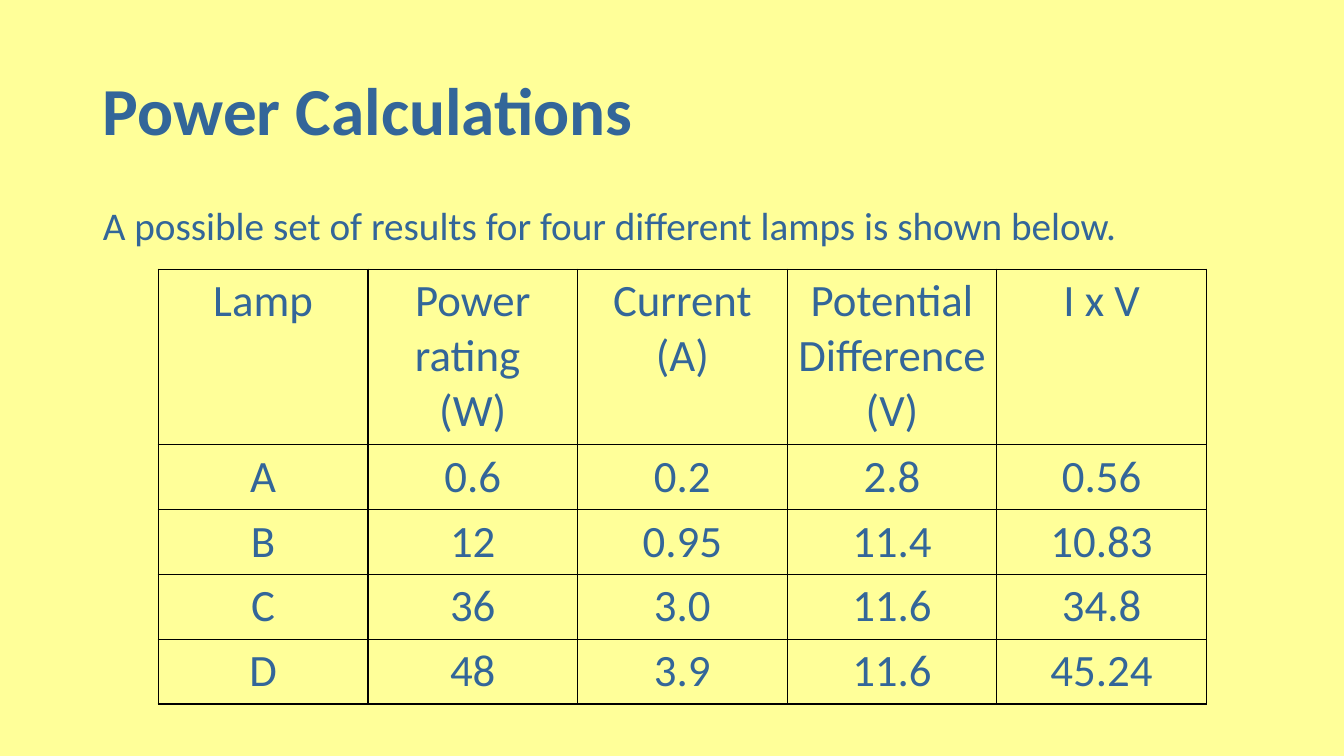
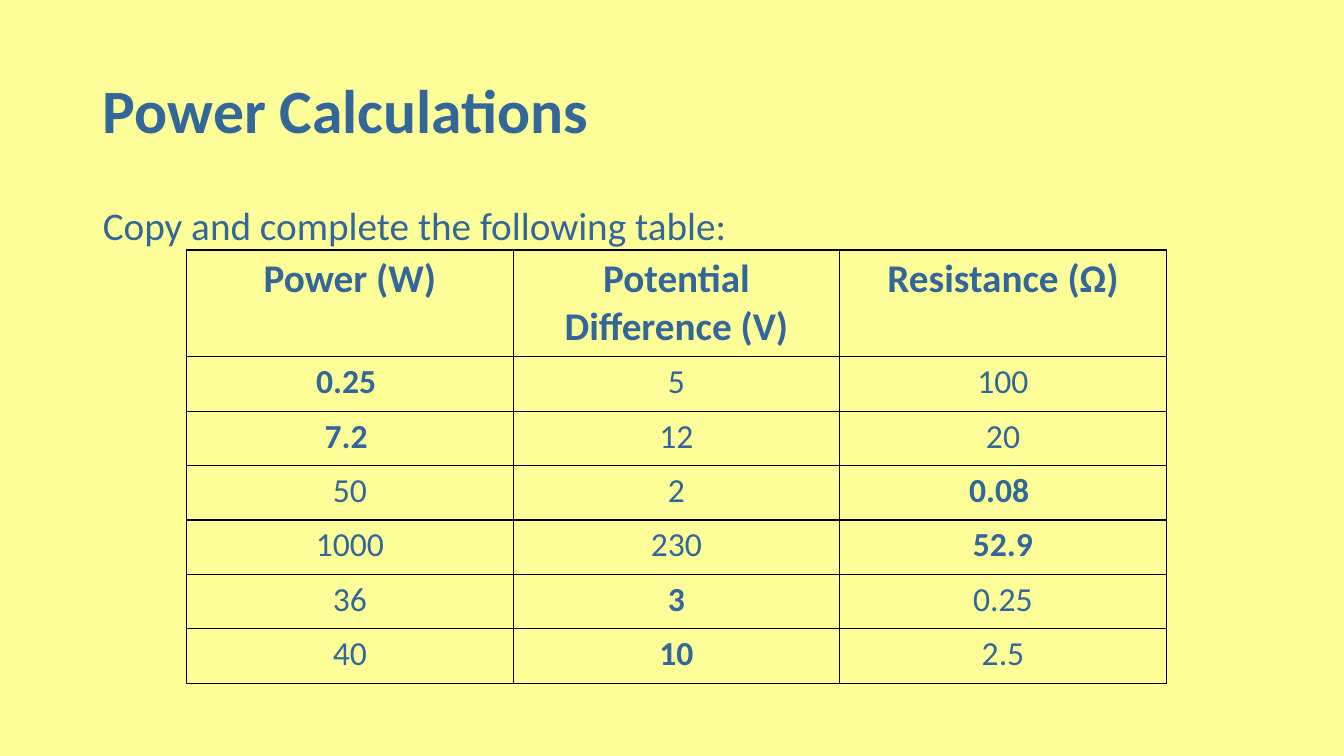
"""Build two lesson slides on power calculations, each with a table of lamp or circuit values."""
from lxml import etree
from pptx import Presentation
from pptx.dml.color import RGBColor
from pptx.enum.text import MSO_ANCHOR, MSO_AUTO_SIZE, PP_ALIGN
from pptx.oxml.ns import qn
from pptx.util import Inches, Pt

PAPER = RGBColor(0xFF, 0xFF, 0x99)
INK = RGBColor(0x33, 0x66, 0x99)
RULE = RGBColor(0, 0, 0)
FONT = "Calibri"
LEFT, CENTER = PP_ALIGN.LEFT, PP_ALIGN.CENTER
TOP, MIDDLE = MSO_ANCHOR.TOP, MSO_ANCHOR.MIDDLE
NO_FIT = MSO_AUTO_SIZE.NONE
WIDTH, HEIGHT = Inches(13.33), Inches(7.5)
TITLE_BOX = (6.9, 5.33, 86.27, 19.33)
INTRO_BOX = (6.9, 26.67, 86.27, 63.47)

LESSONS = [
    {
        "title_size": 48,
        "intro": "A possible set of results for four different lamps is shown below.",
        "corner": (11.78, 35.6),
        "column": 15.6,
        "rows": (23.2, 8.57),
        "sizes": (32, 32),
        "bold": set(),
        "values": [
            ["Lamp", "Power rating \n(W)", "Current (A)", "Potential Difference (V)", "I x V"],
            ["A", "0.6", "0.2", "2.8", "0.56"],
            ["B", "12", "0.95", "11.4", "10.83"],
            ["C", "36", "3.0", "11.6", "34.8"],
            ["D", "48", "3.9", "11.6", "45.24"],
        ],
    },
    {
        "title_size": 44,
        "intro": "Copy and complete the following table:",
        "corner": (13.88, 33.07),
        "column": 24.3,
        "rows": (14.13, 7.2),
        "sizes": (28, 24),
        "bold": {(0, 0), (0, 1), (0, 2), (1, 0), (2, 0), (3, 2), (4, 2), (5, 1), (6, 1)},
        "values": [
            ["Power (W)", "Potential Difference (V)", "Resistance (Ω)"],
            ["0.25 ", "5", "100"],
            ["7.2 ", "12", "20"],
            ["50", "2", "0.08 "],
            ["1000", "230", "52.9"],
            ["36", "3", "0.25"],
            ["40", "10", "2.5"],
        ],
    },
]


def share(percents):
    """Turn alternating percentages of slide width and height into lengths."""
    return [int(side * percent / 100) for side, percent in zip((WIDTH, HEIGHT) * 2, percents)]


def write(frame, text, size, bold, **layout):
    """Fill a text frame and format each of its paragraphs."""
    frame.text = text
    for paragraph in frame.paragraphs:
        for name, value in layout.items():
            setattr(paragraph, name, value)
        font_format = {"name": FONT, "size": Pt(size), "bold": bold}
        for run in paragraph.runs:
            for name, value in font_format.items():
                setattr(run.font, name, value)
            run.font.color.rgb = INK


prs = Presentation()
prs.slide_width, prs.slide_height = WIDTH, HEIGHT
paper_fill = prs.slide_master.background.fill
paper_fill.solid()
paper_fill.fore_color.rgb = PAPER

for lesson in LESSONS:
    slide = prs.slides.add_slide(prs.slide_layouts[1])
    title, intro = slide.shapes.title, slide.placeholders[1]
    for holder, box, anchor in ((title, TITLE_BOX, MIDDLE), (intro, INTRO_BOX, TOP)):
        holder.left, holder.top, holder.width, holder.height = share(box)
        frame_format = {"word_wrap": True, "auto_size": NO_FIT, "vertical_anchor": anchor}
        for name, value in frame_format.items():
            setattr(holder.text_frame, name, value)
    write(title.text_frame, "Power Calculations", lesson["title_size"], True,
          alignment=LEFT, line_spacing=0.9)
    write(intro.text_frame, lesson["intro"], 28, False,
          alignment=LEFT, line_spacing=0.9, space_before=Pt(10))
    intro_props = intro.text_frame.paragraphs[0]._p.get_or_add_pPr()
    intro_props.set("marL", "0")
    intro_props.set("indent", "0")
    etree.SubElement(intro_props, qn("a:buNone"))

    values = lesson["values"]
    head_row, body_row = lesson["rows"]
    row_shares = [head_row] + [body_row] * (len(values) - 1)
    extent = (lesson["column"] * len(values[0]), sum(row_shares))
    results = slide.shapes.add_table(
        len(values), len(values[0]), *share(lesson["corner"] + extent)).table
    results.first_row = results.horz_banding = False
    for column in results.columns:
        column.width = int(WIDTH * lesson["column"] / 100)
    for row, row_share in zip(results.rows, row_shares):
        row.height = int(HEIGHT * row_share / 100)

    for r, row_values in enumerate(values):
        for c, value in enumerate(row_values):
            cell = results.cell(r, c)
            cell.fill.background()
            write(cell.text_frame, value, lesson["sizes"][min(r, 1)],
                  (r, c) in lesson["bold"], alignment=CENTER)
            cell_props = cell._tc.get_or_add_tcPr()
            for position, side in enumerate(("a:lnL", "a:lnR", "a:lnT", "a:lnB")):
                border = etree.Element(qn(side), w=str(Pt(1)))
                border_fill = etree.SubElement(border, qn("a:solidFill"))
                etree.SubElement(border_fill, qn("a:srgbClr"), val=str(RULE))
                cell_props.insert(position, border)

prs.save("out.pptx")
